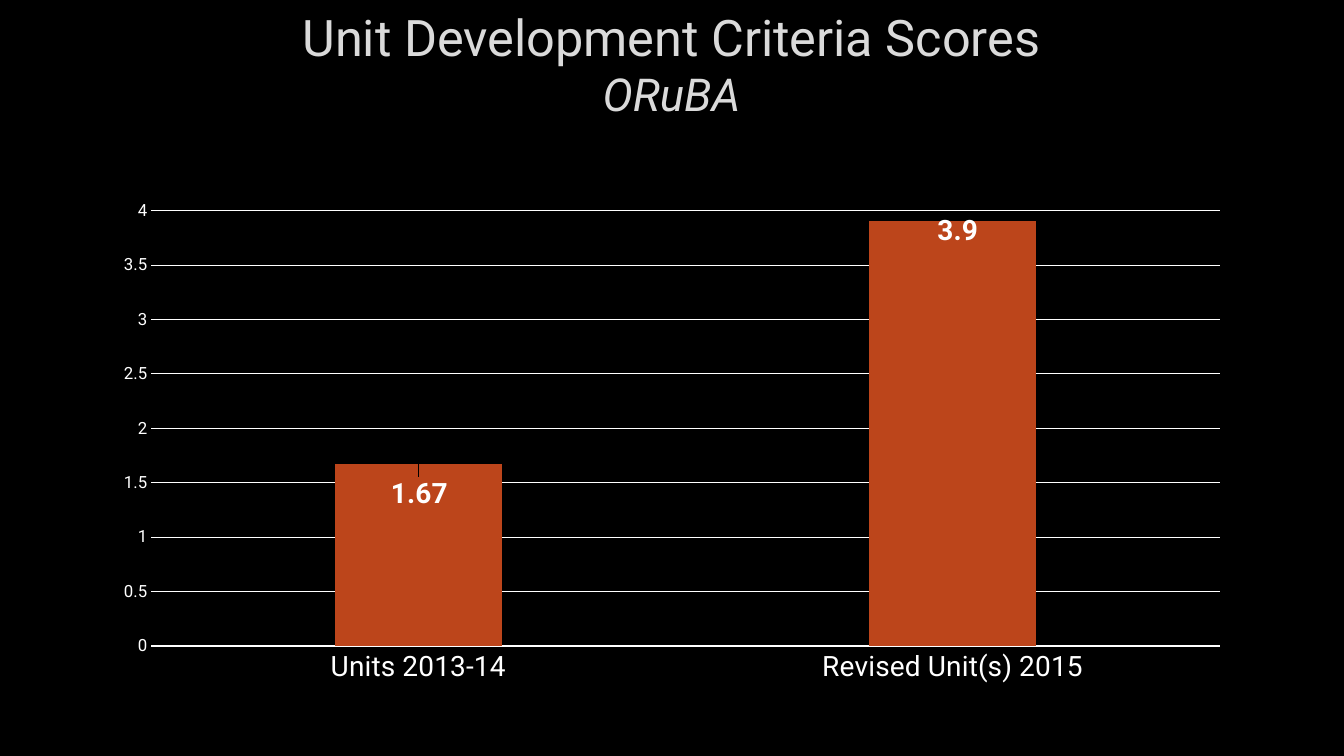
from lxml import etree
from pptx import Presentation
from pptx import util as u
from pptx.chart.data import CategoryChartData
from pptx.dml.color import RGBColor
from pptx.enum import chart as ch, text as tx
from pptx.oxml.ns import qn

HUES = {"back": "000000", "title": "DADADA", "ink": "FFFFFF", "bar": "BC451B"}
FACE = "Roboto"
WIDE, TALL = 11.32, 4.98  # chart size in inches


def style(font, size, hue="ink", bold=False, italic=False):
    font.name, font.size = FACE, u.Pt(size)
    font.bold, font.italic = bold, italic
    font.color.rgb = RGBColor.from_string(HUES[hue])


def place(parent, index, **shares):
    """Insert a manual chart layout, given as shares of the chart's size."""
    layout = etree.Element(qn("c:layout"))
    manual = etree.SubElement(layout, qn("c:manualLayout"))
    for name, value in shares.items():
        etree.SubElement(manual, qn("c:" + name)).set("val", str(value))
    parent.insert(index, layout)


deck = Presentation()
deck.slide_width, deck.slide_height = u.Inches(13.33), u.Inches(7.5)
slide = deck.slides.add_slide(deck.slide_layouts[5])
slide.background.fill.solid()
slide.background.fill.fore_color.rgb = RGBColor.from_string(HUES["back"])
left, wide = u.Inches(1), u.Inches(WIDE)

# Title
title = slide.shapes.title
title.left, title.top, title.width, title.height = left, u.Inches(0.1), wide, u.Inches(1.06)
frame = title.text_frame
frame.auto_size = tx.MSO_AUTO_SIZE.NONE
frame.vertical_anchor = tx.MSO_ANCHOR.MIDDLE
para = frame.paragraphs[0]
para.alignment = tx.PP_ALIGN.CENTER
head = para.add_run()
head.text = "Unit Development Criteria Scores"
style(head.font, 36, "title")
para.add_line_break()
sub = para.add_run()
sub.text = "ORuBA"
style(sub.font, 32.4, "title", italic=True)

# Chart
data = CategoryChartData()
data.categories = ["Units 2013-14", "Revised Unit(s) 2015"]
data.add_series("Series 1", [1.67, 3.9])
chart = slide.shapes.add_chart(ch.XL_CHART_TYPE.COLUMN_CLUSTERED, left, u.Inches(1.89),
                               wide, u.Inches(TALL), data).chart
chart.has_legend = chart.has_title = False
style(chart.font, 10)
area = chart._chartSpace.chart.plotArea
for old in area.findall(qn("c:layout")):
    area.remove(old)
place(area, 0, layoutTarget="inner", xMode="edge", yMode="edge",
      x=0.5 / WIDE, y=0.2 / TALL, w=10.6 / WIDE, h=4.32 / TALL)

# Axes
cat, val = chart.category_axis, chart.value_axis
for axis, size in ((cat, 20), (val, 12)):
    axis.major_tick_mark = axis.minor_tick_mark = ch.XL_TICK_MARK.NONE
    style(axis.tick_labels.font, size)
val.minimum_scale, val.maximum_scale, val.major_unit = 0, 4, 0.5
val.has_major_gridlines = True
val.format.line.fill.background()
for line in (cat.format.line, val.major_gridlines.format.line):
    line.width = u.Pt(0.75)
    line.color.rgb = RGBColor.from_string(HUES["ink"])

# Bars and their labels, moved down from the bar's end
plot = chart.plots[0]
plot.gap_width, plot.overlap, plot.vary_by_categories = 219, -27, False
bars = plot.series[0]
bars.format.fill.solid()
bars.format.fill.fore_color.rgb = RGBColor.from_string(HUES["bar"])
for i, (shift, drop) in enumerate(((0.01, 0.5), (0.05, 0.3))):
    label = bars.points[i].data_label
    style(label.font, 20, bold=True)
    label.position = ch.XL_LABEL_POSITION.OUTSIDE_END
    place(chart._chartSpace.xpath(".//c:dLbl")[i], 1, x=shift / WIDE, y=drop / TALL)

deck.save("out.pptx")
